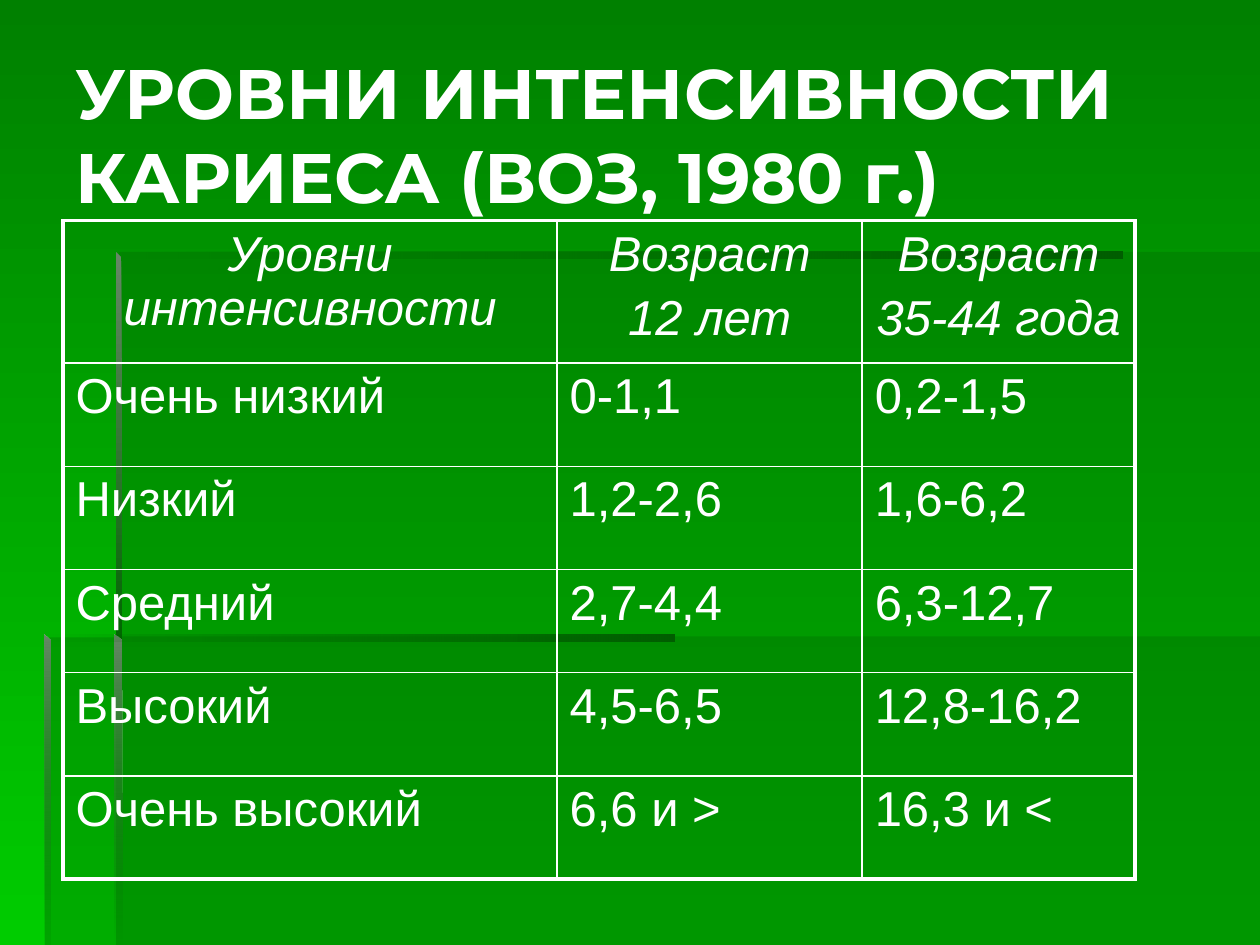
from dataclasses import dataclass

from lxml import etree
from pptx import Presentation
from pptx.dml.color import RGBColor
from pptx.dml.fill import FillFormat
from pptx.enum.text import MSO_ANCHOR, PP_ALIGN
from pptx.oxml.ns import qn
from pptx.slide import Slide
from pptx.table import Table, _Cell
from pptx.text.text import _Paragraph
from pptx.util import Cm, Pt

MIDDLE = MSO_ANCHOR.MIDDLE
LEFT, CENTER = PP_ALIGN.LEFT, PP_ALIGN.CENTER

WHITE = "FFFFFF"
DARK, DEEP, GREY = "006600", "005E00", "668666"
RIGHTWARD, DOWNWARD = 0, 270
WIDTH, HEIGHT = 25.4, 19.05
OUTER_BORDER, INNER_BORDER = 2.25, 1


@dataclass(frozen=True)
class Panel:
    points: tuple[tuple[float, float], ...]
    colors: tuple[str, ...]
    opacities: tuple[int, ...]
    angle: int = RIGHTWARD


def box(left: float, top: float, right: float, bottom: float) -> tuple[tuple[float, float], ...]:
    return (left, top), (left, bottom), (right, bottom), (right, top)


PANELS = (
    Panel(box(2.34, 12.83, WIDTH, HEIGHT), (DARK,), (30,)),
    Panel(
        ((2.39, 12.85), (0.91, 12.85), (0.91, HEIGHT), (WIDTH, HEIGHT), (WIDTH, 5.08), (2.39, 5.08)),
        (DARK,),
        (30,),
    ),
    Panel(box(2.34, 5.08, 22.63, 5.21), (DARK, DEEP), (0, 100)),
    Panel(
        ((2.34, 5.08), (2.34, 12.95), (2.46, 12.95), (2.44, 5.18)),
        (GREY, DARK),
        (100, 100),
        DOWNWARD,
    ),
    Panel(
        ((2.31, HEIGHT), (2.46, HEIGHT), (2.44, 12.9), (2.31, 12.8)),
        (GREY, DARK),
        (100, 0),
        DOWNWARD,
    ),
    Panel(box(0.89, 12.8, 13.59, 12.93), (DARK, DEEP), (0, 100)),
    Panel(
        ((0.89, 12.8), (0.89, HEIGHT), (1.02, HEIGHT), (1.02, 12.93)),
        (GREY, DARK),
        (100, 10),
        DOWNWARD,
    ),
)

TITLE = "УРОВНИ ИНТЕНСИВНОСТИ КАРИЕСА (ВОЗ, 1980 г.)"
COLUMN_WIDTHS = (9.96, 6.15, 5.5)
ROW_HEIGHTS = (2.87,) + (2.08,) * 5
ROWS = (
    ("Уровни интенсивности", "Возраст\n12 лет", "Возраст\n35-44 года"),
    ("Очень низкий", "0-1,1", "0,2-1,5"),
    ("Низкий", "1,2-2,6", "1,6-6,2"),
    ("Средний", "2,7-4,4", "6,3-12,7"),
    ("Высокий", "4,5-6,5", "12,8-16,2"),
    ("Очень высокий", "6,6 и >", "16,3 и <"),
)


def color(value: str) -> RGBColor:
    return RGBColor.from_string(value)


def fill_gradient(fill: FillFormat, colors: tuple[str, ...], angle: int) -> None:
    fill.gradient()
    fill.gradient_angle = angle
    for stop, value in zip(fill.gradient_stops, colors):
        stop.color.rgb = color(value)


def draw_panel(slide: Slide, panel: Panel) -> None:
    start, *others = [(Cm(x), Cm(y)) for x, y in panel.points]
    builder = slide.shapes.build_freeform(*start)
    builder.add_line_segments(others, close=True)
    shape = builder.convert_to_shape()
    shape.shadow.inherit = False
    shape.line.fill.background()
    if len(panel.colors) == 1:
        shape.fill.solid()
        shape.fill.fore_color.rgb = color(panel.colors[0])
    else:
        fill_gradient(shape.fill, panel.colors, panel.angle)
    for element, opacity in zip(shape.element.iter(qn("a:srgbClr")), panel.opacities):
        if opacity < 100:
            etree.SubElement(element, qn("a:alpha"), val=str(opacity * 1000))


def style_paragraph(paragraph: _Paragraph, font_name: str, size: int) -> None:
    paragraph.font.name = font_name
    paragraph.font.size = Pt(size)
    paragraph.font.color.rgb = color(WHITE)


def draw_title(slide: Slide) -> None:
    shape = slide.shapes.add_textbox(Cm(1.27), Cm(0.69), Cm(23.29), Cm(3.99))
    frame = shape.text_frame
    frame.word_wrap = True
    frame.vertical_anchor = MIDDLE
    frame.text = TITLE
    paragraph = frame.paragraphs[0]
    style_paragraph(paragraph, "Montserrat", 40)
    paragraph.font.bold = True


def set_borders(cell: _Cell, outer_sides: dict[str, bool]) -> None:
    properties = cell._tc.get_or_add_tcPr()
    for side, is_outer in outer_sides.items():
        width = Pt(OUTER_BORDER if is_outer else INNER_BORDER)
        line = etree.SubElement(properties, qn(f"a:ln{side}"), w=str(width))
        solid = etree.SubElement(line, qn("a:solidFill"))
        etree.SubElement(solid, qn("a:srgbClr"), val=WHITE)


def fill_cell(table: Table, row: int, column: int, text: str) -> None:
    cell = table.cell(row, column)
    is_header = row == 0
    set_borders(
        cell,
        {
            "L": column == 0,
            "R": column == len(COLUMN_WIDTHS) - 1,
            "T": is_header,
            "B": row == len(ROWS) - 1,
        },
    )
    cell.fill.background()
    cell.text_frame.text = text
    for paragraph in cell.text_frame.paragraphs:
        style_paragraph(paragraph, "Arial", 28)
        paragraph.font.italic = is_header
        paragraph.alignment = CENTER if is_header else LEFT
        paragraph.space_before = Pt(5.6)


def draw_table(slide: Slide) -> None:
    table = slide.shapes.add_table(
        len(ROWS), len(COLUMN_WIDTHS), Cm(1.27), Cm(4.45), Cm(sum(COLUMN_WIDTHS)), Cm(sum(ROW_HEIGHTS))
    ).table
    table.first_row = False
    table.horz_banding = False
    for column, width in zip(table.columns, COLUMN_WIDTHS):
        column.width = Cm(width)
    for row, height in zip(table.rows, ROW_HEIGHTS):
        row.height = Cm(height)
    for row_index, texts in enumerate(ROWS):
        for column_index, text in enumerate(texts):
            fill_cell(table, row_index, column_index, text)


def main() -> None:
    presentation = Presentation()
    presentation.slide_width = Cm(WIDTH)
    presentation.slide_height = Cm(HEIGHT)
    slide = presentation.slides.add_slide(presentation.slide_layouts[6])
    fill_gradient(slide.background.fill, ("008000", "00CC00"), DOWNWARD)
    for panel in PANELS:
        draw_panel(slide, panel)
    draw_title(slide)
    draw_table(slide)
    presentation.save("out.pptx")


if __name__ == "__main__":
    main()
